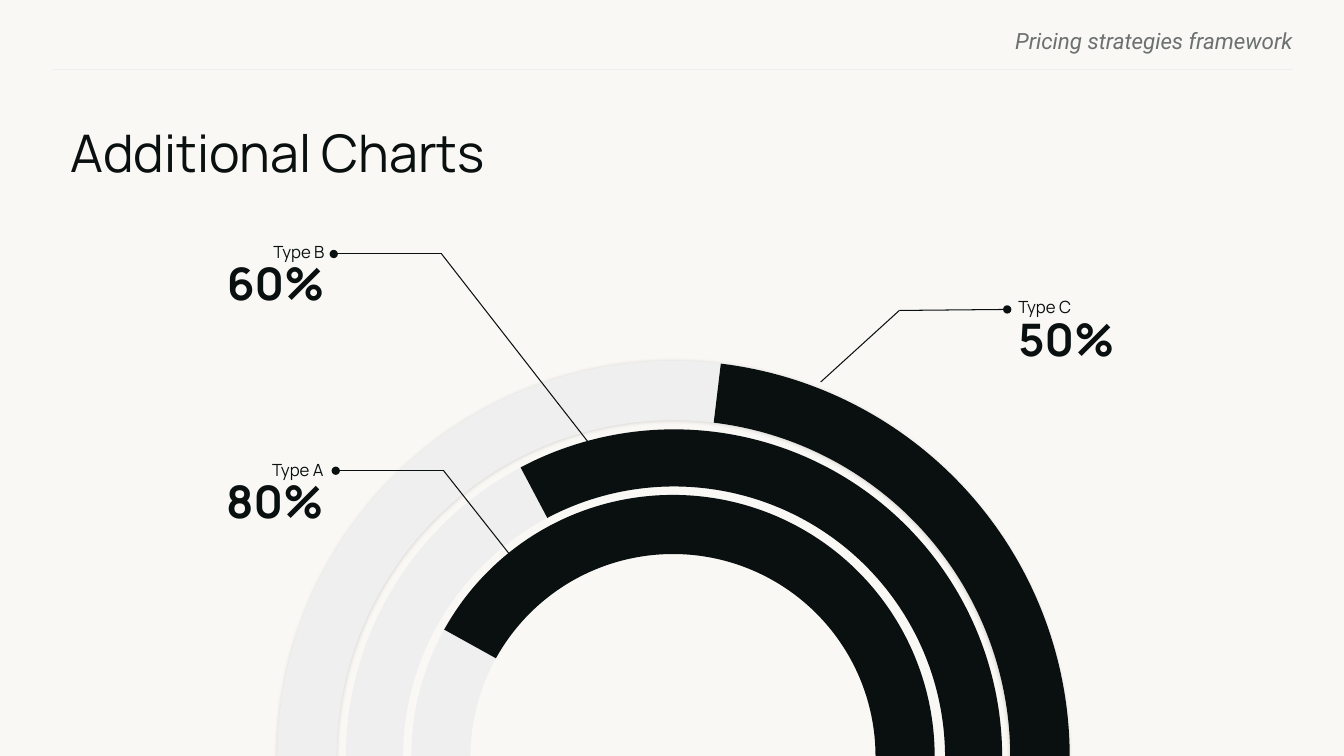
from lxml import etree
from pptx import Presentation
from pptx.dml.color import RGBColor
from pptx.enum.shapes import MSO_CONNECTOR, MSO_SHAPE
from pptx.enum.text import MSO_AUTO_SIZE, PP_ALIGN
from pptx.oxml import parse_xml
from pptx.oxml.ns import nsdecls, qn
from pptx.util import Inches, Pt

STRAIGHT = MSO_CONNECTOR.STRAIGHT
BLOCK_ARC = MSO_SHAPE.BLOCK_ARC
LEFT, RIGHT = PP_ALIGN.LEFT, PP_ALIGN.RIGHT
GROW = MSO_AUTO_SIZE.SHAPE_TO_FIT_TEXT

INK, TRACK, PAPER, GREY = "09100F", "EFEFEF", "F9F8F5", "6C706F"
HALF_TURN, ARC_END = 108, 0.15

# left, top, diameter, ring width ratio, start of the dark arc
RINGS = [
    (2.75, 3.58, 7.86, 0.075, 166.12),
    (3.43, 4.26, 6.51, 0.087, 145.28),
    (4.08, 4.91, 5.19, 0.113, 125.41),
]
# name, value, label position, alignment, leader points from dot to ring
CALLOUTS = [
    ("Type A", "80%", (1.65, 4.54), RIGHT, [(3.33, 4.67), (4.4, 4.67), (5.11, 5.57)]),
    ("Type B", "60%", (1.66, 2.38), RIGHT, [(3.31, 2.52), (4.38, 2.52), (5.86, 4.42)]),
    ("Type C", "50%", (10.1, 2.93), LEFT, [(9.99, 3.07), (8.92, 3.08), (8.14, 3.79)]),
]


def rgb(value):
    return RGBColor.from_string(value)


def add_text(s, box, paragraphs, align=LEFT, insets=(0, 0), grow=False, **spacing):
    """Add a text box; paragraphs are (text, font values) pairs."""
    tb = s.shapes.add_textbox(*map(Inches, box))
    tf = tb.text_frame
    tf.word_wrap = True
    tf.margin_left = tf.margin_right = Inches(insets[0])
    tf.margin_top = tf.margin_bottom = Inches(insets[1])
    if grow:
        tf.auto_size = GROW
    for i, (text, font) in enumerate(paragraphs):
        p = tf.paragraphs[0] if i == 0 else tf.add_paragraph()
        p.alignment = align
        for name, value in spacing.items():
            setattr(p, name, value)
        r = p.add_run()
        r.text = text
        style = dict(font)
        r.font.color.rgb = rgb(style.pop("color", INK))
        for name, value in style.items():
            setattr(r.font, name, value)


def add_line(s, start, end, color=INK, dot=False):
    """Add a straight line, with a round dot at its start if asked."""
    c = s.shapes.add_connector(STRAIGHT, *map(Inches, start + end))
    c.line.color.rgb = rgb(color)
    c.line.width = Pt(0.75)
    if dot:
        etree.SubElement(c.line._get_or_add_ln(), qn("a:headEnd"), type="oval")
    etree.SubElement(c._element.spPr, qn("a:effectLst"))


def add_arc(s, left, top, size, ratio, start, color):
    sp = s.shapes.add_shape(BLOCK_ARC, *map(Inches, (left, top, size, size)))
    sp.shadow.inherit = False
    sp.fill.solid()
    sp.fill.fore_color.rgb = rgb(color)
    sp.line.fill.background()
    for i, value in enumerate((start, ARC_END, ratio)):
        sp.adjustments[i] = value
    return sp


def add_soft_shadow(sp):
    effects = sp._element.spPr.find(qn("a:effectLst"))
    effects.append(parse_xml(
        f'<a:outerShdw {nsdecls("a")} blurRad="{Pt(3)}" dist="{Pt(1)}" dir="5400000">'
        '<a:srgbClr val="000000"><a:alpha val="15000"/></a:srgbClr></a:outerShdw>'))


def add_rings(s):
    tracks = [add_arc(s, *ring[:4], HALF_TURN, TRACK) for ring in RINGS]
    add_soft_shadow(tracks[0])
    for ring in RINGS:
        add_arc(s, *ring, INK)


def add_callout(s, name, value, position, align, points):
    dot, bend, tip = points
    add_line(s, dot, bend, dot=True)
    add_line(s, bend, tip)
    fonts = [(name, {"name": "Manrope", "size": Pt(12)}),
             (value, {"name": "Manrope", "size": Pt(32), "bold": True})]
    add_text(s, position + (1.56, 0.82), fonts, align, (0, 0.04), grow=True,
             line_spacing=0.9)


def main():
    prs = Presentation()
    prs.slide_width, prs.slide_height = Inches(13.33), Inches(7.5)
    s = prs.slides.add_slide(prs.slide_layouts[6])
    s.background.fill.solid()
    s.background.fill.fore_color.rgb = rgb(PAPER)

    header = {"name": "Roboto", "size": Pt(16), "italic": True, "color": GREY}
    add_text(s, (7.68, 0.27, 5.14, 0.24), [("Pricing strategies framework", header)], RIGHT)
    add_line(s, (0.52, 0.69), (12.82, 0.69), TRACK)
    title = {"name": "Manrope", "size": Pt(37)}
    add_text(s, (0.6, 1.22, 12.3, 0.68), [("Additional Charts", title)],
             insets=(0.1, 0.05), line_spacing=0.9, space_after=Pt(13))
    add_rings(s)
    for callout in CALLOUTS:
        add_callout(s, *callout)
    prs.save("out.pptx")


if __name__ == "__main__":
    main()
